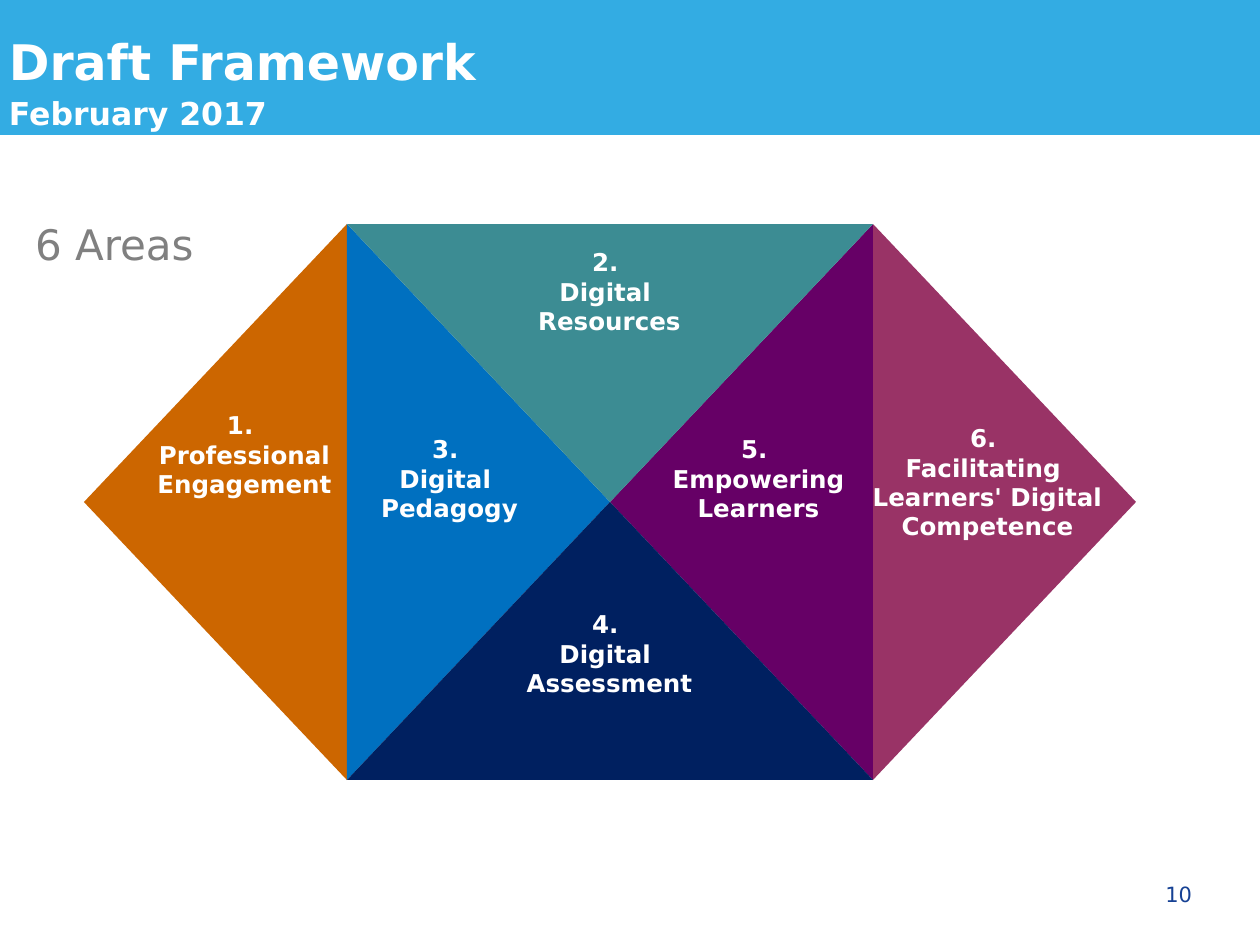
from pptx import Presentation
from pptx.dml.color import RGBColor
from pptx.enum.shapes import MSO_SHAPE as Shape
from pptx.enum.text import MSO_ANCHOR as Anchor, MSO_AUTO_SIZE as AutoSize, PP_ALIGN as Align
from pptx.oxml.ns import qn
from pptx.util import Emu, Pt
from lxml import etree

FONT = "DejaVu Sans"
PX_PER_INCH = 126
COLORS = {
    "banner": "33ACE3", "white": "FFFFFF", "grey": "808080", "number": "164194",
    "orange": "CC6600", "teal": "3C8C93", "blue": "0070C0",
    "navy": "002060", "purple": "660066", "plum": "993366",
}


def px(value):
    return Emu(round(value * 914400 / PX_PER_INCH))


def place(shape, box):
    shape.left, shape.top, shape.width, shape.height = map(px, box)


def add_run(paragraph, text, size, color, bold=False):
    run = paragraph.add_run()
    run.text = text
    run.font.name, run.font.size, run.font.bold = FONT, Pt(size), bold
    run.font.color.rgb = RGBColor.from_string(COLORS[color])


def set_margins(frame, horizontal, vertical):
    frame.margin_left = frame.margin_right = px(horizontal)
    frame.margin_top = frame.margin_bottom = px(vertical)


def add_filled(slide, preset, box, color):
    shape = slide.shapes.add_shape(preset, *map(px, box))
    shape.shadow.inherit = False
    shape.fill.solid()
    shape.fill.fore_color.rgb = RGBColor.from_string(COLORS[color])
    shape.line.fill.background()
    return shape


def fill_placeholder(placeholder, box):
    """Moves a placeholder and returns its plain, left-aligned paragraph."""
    place(placeholder, box)
    frame = placeholder.text_frame
    frame.word_wrap = True
    frame.auto_size = AutoSize.NONE
    frame.vertical_anchor = Anchor.TOP
    set_margins(frame, 0, 0)
    paragraph = frame.paragraphs[0]
    paragraph.alignment = Align.LEFT
    paragraph.line_spacing = 1.1
    paragraph.space_before = Pt(0)
    return paragraph


def add_header(slide, box):
    left, top, width, height = box
    banner = add_filled(slide, Shape.RECTANGLE, box, "banner")
    # Send the banner behind the title
    slide.shapes._spTree.insert(2, banner._element)
    title = fill_placeholder(slide.shapes.title, (left + 9, top + 26, width - 129, height - 46))
    add_run(title, "Draft Framework", 28, "white", True)
    title.add_line_break()
    add_run(title, "February 2017", 18, "white", True)


def add_intro(slide, box):
    paragraph = fill_placeholder(slide.placeholders[1], box)
    properties = paragraph._p.get_or_add_pPr()
    properties.set("marL", "0")
    properties.set("indent", "0")
    etree.SubElement(properties, qn("a:buNone"))
    add_run(paragraph, "6 Areas", 24, "grey")


def add_triangle(slide, box, rotation, color):
    """Fits a triangle into the box it covers once it is rotated."""
    left, top, width, height = box
    if rotation in (90, 270):
        shift = (width - height) / 2
        box = (left + shift, top - shift, height, width)
    add_filled(slide, Shape.ISOSCELES_TRIANGLE, box, color).rotation = rotation


def add_label(slide, box, lines):
    frame = slide.shapes.add_textbox(*map(px, box)).text_frame
    frame.word_wrap = True
    frame.auto_size = AutoSize.SHAPE_TO_FIT_TEXT
    for index, line in enumerate(lines):
        paragraph = frame.add_paragraph() if index else frame.paragraphs[0]
        paragraph.alignment = Align.CENTER
        add_run(paragraph, line, 14, "white", True)


def add_hexagon(slide, box):
    left, top, width, height = box
    column, half = width / 4, height / 2
    # Columns from the left, rows from the top, in columns and half heights
    triangles = [
        (3, 0, 1, 2, 90, "plum"),
        (0, 0, 1, 2, 270, "orange"),
        (1, 0, 1, 2, 90, "blue"),
        (2, 0, 1, 2, 270, "purple"),
        (1, 0, 2, 1, 180, "teal"),
        (1, 1, 2, 1, 0, "navy"),
    ]
    for x, y, columns, halves, rotation, color in triangles:
        area = (left + x * column, top + y * half, columns * column, halves * half)
        add_triangle(slide, area, rotation, color)

    labels = [
        (12, 180, ["1. ", "Professional Engagement"]),
        (377, 17, ["2. ", "Digital ", "Resources"]),
        (217, 204, ["3. ", "Digital ", "Pedagogy"]),
        (377, 379, ["4. ", "Digital ", "Assessment"]),
        (526, 204, ["5. ", "Empowering", "Learners"]),
        (755, 193, ["6. ", "Facilitating ", "Learners' Digital Competence"]),
    ]
    for x, y, lines in labels:
        label_height = 131 if lines[0] == "6. " else 102
        add_label(slide, (left + x, top + y, 297, label_height), lines)


def add_page_number(slide, box):
    frame = slide.shapes.add_textbox(*map(px, box)).text_frame
    frame.word_wrap = True
    frame.vertical_anchor = Anchor.MIDDLE
    set_margins(frame, 13, 0)
    paragraph = frame.paragraphs[0]
    paragraph.alignment = Align.RIGHT
    add_run(paragraph, "10", 12, "number")


def main():
    presentation = Presentation()
    presentation.slide_width, presentation.slide_height = px(1260), px(945)
    slide = presentation.slides.add_slide(presentation.slide_layouts[1])
    add_header(slide, (0, 0, 1260, 135))
    add_hexagon(slide, (84, 224, 1052, 556))
    add_intro(slide, (35, 213, 237, 55))
    add_page_number(slide, (911, 869, 294, 50))
    presentation.save("out.pptx")


if __name__ == "__main__":
    main()
